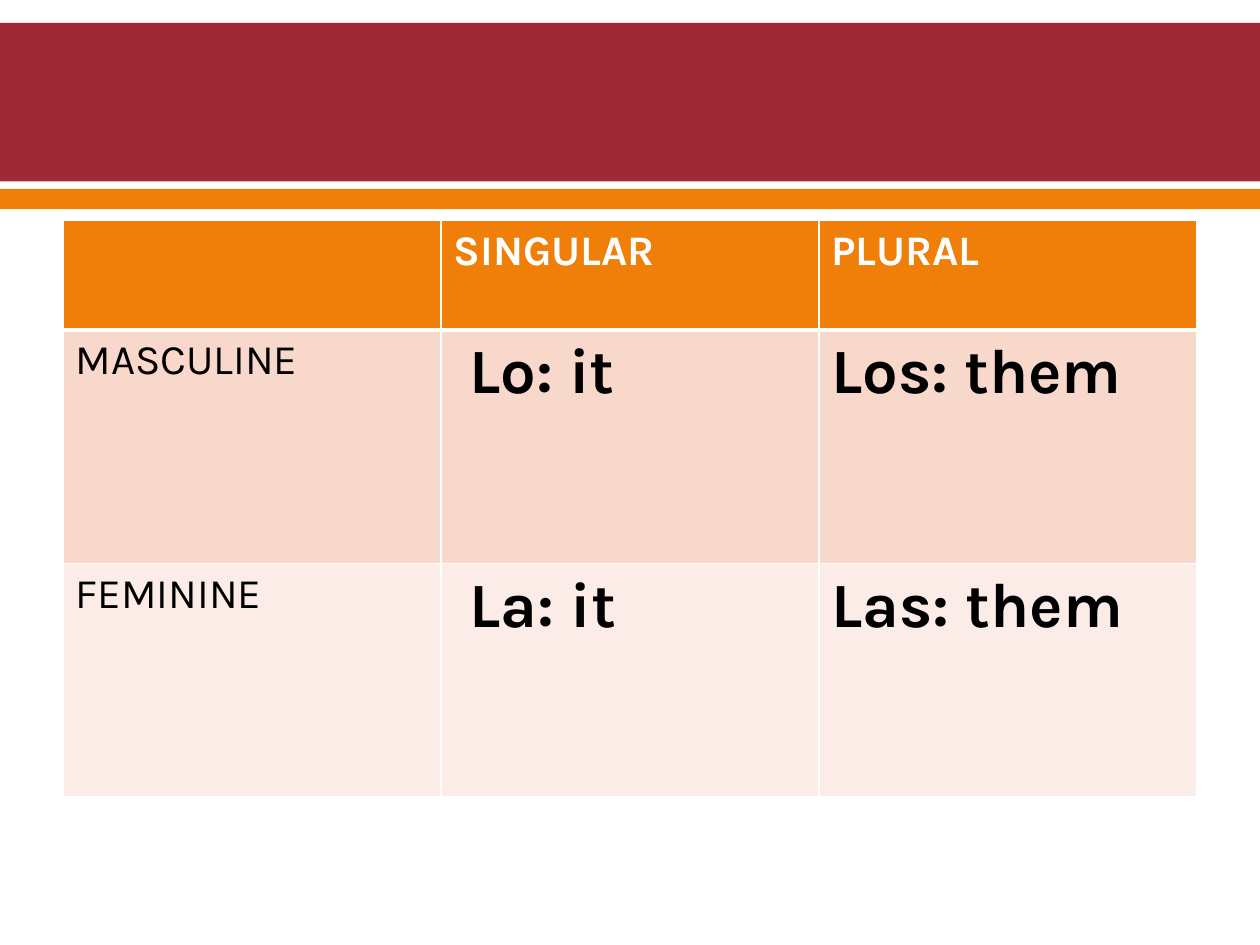
from dataclasses import dataclass

from lxml.etree import SubElement
from pptx import Presentation
from pptx.dml.color import RGBColor
from pptx.enum.shapes import MSO_SHAPE as Preset
from pptx.oxml.ns import qn
from pptx.util import Cm, Pt

WHITE = RGBColor(0xFF, 0xFF, 0xFF)
BLACK = RGBColor(0, 0, 0)
CRIMSON = RGBColor(0x9F, 0x29, 0x36)
ORANGE = RGBColor(0xF0, 0x7F, 0x09)
PEACH = RGBColor(0xF9, 0xD8, 0xCC)
PALE_PEACH = RGBColor(0xFC, 0xEC, 0xE7)
FONT = "Karla"


@dataclass
class Band:
    top: float
    height: float
    color: RGBColor


@dataclass
class PronounRow:
    words: tuple[str, str, str]
    height: float
    fill: RGBColor
    top_border: float = 1
    bottom_border: float = 1
    is_header: bool = False


BANDS = [Band(0.46, 3.2, CRIMSON), Band(3.81, 0.41, ORANGE)]
ROWS = [
    PronounRow(("", "SINGULAR", "PLURAL"), 2.2, ORANGE, bottom_border=3, is_header=True),
    PronounRow(("MASCULINE", " Lo: it", "Los: them"), 4.71, PEACH, top_border=3),
    PronounRow(("FEMININE", " La: it", "Las: them"), 4.71, PALE_PEACH),
]


def draw_band(slide, band: Band, width: int) -> None:
    bar = slide.shapes.add_shape(Preset.RECTANGLE, 0, Cm(band.top), width, Cm(band.height))
    bar.shadow.inherit = False
    bar.fill.solid()
    bar.fill.fore_color.rgb = band.color
    bar.line.fill.background()


def set_borders(cell, top: float, bottom: float) -> None:
    """Give the cell white borders; call before the fill, which must follow them."""
    properties = cell._tc.get_or_add_tcPr()
    for side, points in (("L", 1), ("R", 1), ("T", top), ("B", bottom)):
        line = SubElement(properties, qn(f"a:ln{side}"), w=str(Pt(points)))
        SubElement(SubElement(line, qn("a:solidFill")), qn("a:srgbClr"), val=str(WHITE))


def draw_cell(cell, word: str, row: PronounRow, is_label: bool) -> None:
    set_borders(cell, row.top_border, row.bottom_border)
    cell.fill.solid()
    cell.fill.fore_color.rgb = row.fill
    if not word:
        return
    run = cell.text_frame.paragraphs[0].add_run()
    run.text = word
    run.font.name = FONT
    run.font.size = Pt(24 if row.is_header or is_label else 36)
    run.font.bold = not is_label
    run.font.color.rgb = WHITE if row.is_header else BLACK


def draw_pronoun_table(slide, rows: list[PronounRow]) -> None:
    height = Cm(sum(row.height for row in rows))
    table = slide.shapes.add_table(
        len(rows), 3, Cm(1.27), Cm(4.45), Cm(22.86), height).table
    for row_index, row in enumerate(rows):
        table.rows[row_index].height = Cm(row.height)
        for column, word in enumerate(row.words):
            draw_cell(table.cell(row_index, column), word, row, is_label=column == 0)


def main() -> None:
    deck = Presentation()
    deck.slide_width, deck.slide_height = Cm(25.4), Cm(19.05)
    slide = deck.slides.add_slide(deck.slide_layouts[6])
    for band in BANDS:
        draw_band(slide, band, deck.slide_width)
    draw_pronoun_table(slide, ROWS)
    deck.save("out.pptx")


if __name__ == "__main__":
    main()
